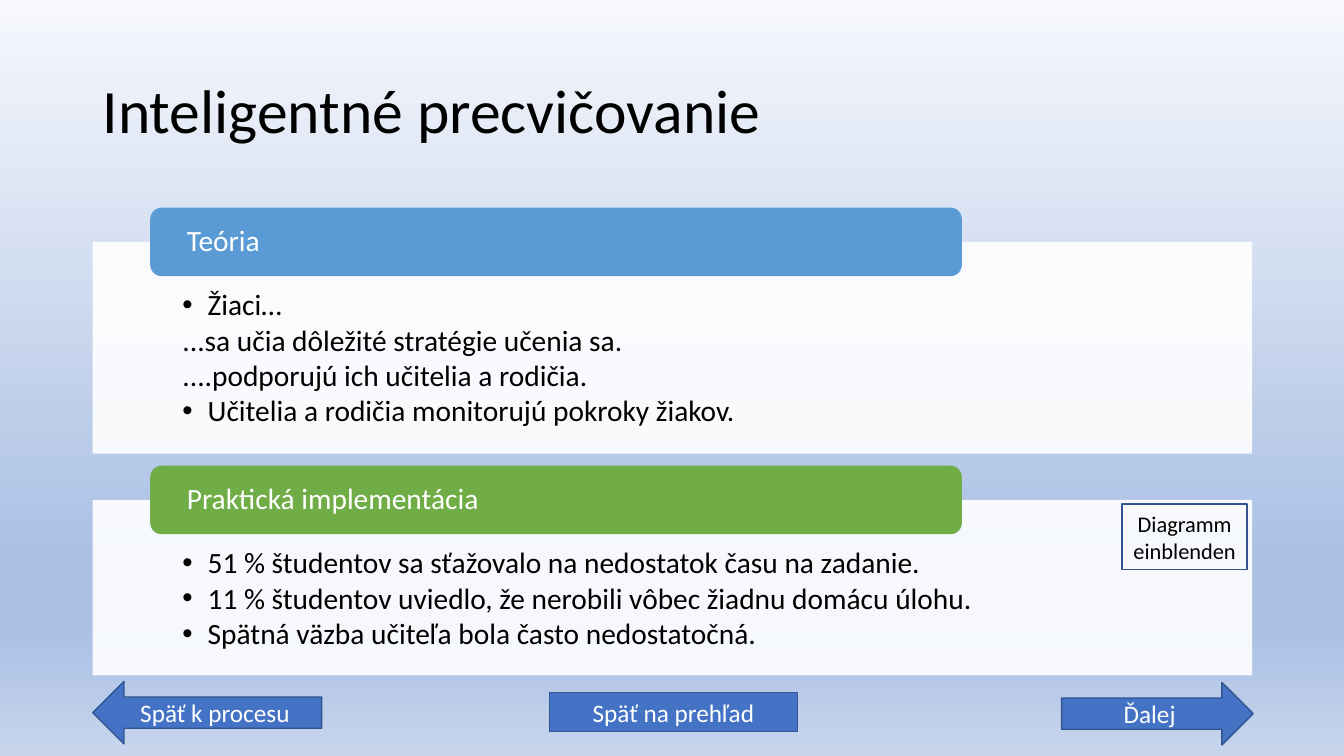
from dataclasses import dataclass

from lxml import etree
from pptx import Presentation
from pptx.dml.color import RGBColor
from pptx.enum.shapes import MSO_SHAPE
from pptx.enum.text import MSO_ANCHOR, PP_ALIGN
from pptx.oxml.ns import qn
from pptx.util import Inches, Pt

RECTANGLE = MSO_SHAPE.RECTANGLE
ROUNDED = MSO_SHAPE.ROUNDED_RECTANGLE
LEFT_ARROW = MSO_SHAPE.LEFT_ARROW
RIGHT_ARROW = MSO_SHAPE.RIGHT_ARROW
LEFT, CENTER = PP_ALIGN.LEFT, PP_ALIGN.CENTER
TOP, MIDDLE = MSO_ANCHOR.TOP, MSO_ANCHOR.MIDDLE


@dataclass(frozen=True)
class Theme:
    font: str = "Calibri"
    black: str = "000000"
    white: str = "FFFFFF"
    theory: str = "5B9BD5"
    practice: str = "70AD47"
    button: str = "4472C4"
    outline: str = "325491"
    backdrop: tuple = ((0, "F6F8FC"), (74, "ABC0E4"), (83, "ABC0E4"), (100, "C7D5ED"))
    title_size: int = 44
    body_size: int = 21
    button_size: int = 18
    note_size: int = 16


theme = Theme()
deck = Presentation()
deck.slide_width, deck.slide_height = Inches(13.33), Inches(7.5)
page = deck.slides.add_slide(deck.slide_layouts[6])


def add_box(kind, left, top, width, height, fill=None, line=None):
    box = page.shapes.add_shape(kind, Inches(left), Inches(top), Inches(width), Inches(height))
    box.shadow.inherit = False
    if fill:
        box.fill.solid()
        box.fill.fore_color.rgb = RGBColor.from_string(fill)
    else:
        box.fill.background()
    if line:
        box.line.color.rgb = RGBColor.from_string(line)
        box.line.width = Pt(1)
    else:
        box.line.fill.background()
    return box


def write(box, lines, size, color, align=LEFT, anchor=MIDDLE, insets=(0.1, 0.05), spacing=0.9):
    """Fill the box with one paragraph per line; insets are horizontal and vertical."""
    frame = box.text_frame
    frame.word_wrap = True
    frame.vertical_anchor = anchor
    frame.margin_left = frame.margin_right = Inches(insets[0])
    frame.margin_top = frame.margin_bottom = Inches(insets[1])
    for number, line in enumerate(lines):
        para = frame.paragraphs[0] if number == 0 else frame.add_paragraph()
        para.alignment = align
        para.line_spacing = spacing
        span = para.add_run()
        span.text = line
        span.font.name = theme.font
        span.font.size = Pt(size)
        span.font.color.rgb = RGBColor.from_string(color)
    return frame


# Background gradient, top to bottom
backdrop = page.background.fill
backdrop.gradient()
backdrop.gradient_angle = 270
stops = next(page.element.iter(qn("a:gsLst")))
for stop in list(stops):
    stops.remove(stop)
for position, color in theme.backdrop:
    stop = etree.SubElement(stops, qn("a:gs"), pos=str(position * 1000))
    etree.SubElement(stop, qn("a:srgbClr"), val=color)

# Title
title = page.shapes.add_textbox(Inches(0.92), Inches(0.4), Inches(11.5), Inches(1.45))
write(title, ["Inteligentné precvičovanie"], theme.title_size, theme.black)

# Sections: heading, colour, panel top, panel height, (bulleted, line)
sections = [
    ("Teória", theme.theory, 2.4, 2.1, [
        (True, "Žiaci…"),
        (False, "...sa učia dôležité stratégie učenia sa."),
        (False, "....podporujú ich učitelia a rodičia."),
        (True, "Učitelia a rodičia monitorujú pokroky žiakov."),
    ]),
    ("Praktická implementácia", theme.practice, 4.96, 1.74, [
        (True, "51 % študentov sa sťažovalo na nedostatok času na zadanie."),
        (True, "11 % študentov uviedlo, že nerobili vôbec žiadnu domácu úlohu."),
        (True, "Spätná väzba učiteľa bola často nedostatočná."),
    ]),
]
for heading, color, top, height, points in sections:
    panel = add_box(RECTANGLE, 0.92, top, 11.5, height, theme.white)
    panel_color = next(panel.element.spPr.iter(qn("a:srgbClr")))
    etree.SubElement(panel_color, qn("a:alpha"), val="90000")
    frame = write(panel, [line for _, line in points], theme.body_size, theme.black,
                  anchor=TOP, insets=(0.89, 0.48))
    frame.margin_bottom = Inches(0.16)
    for para, (bulleted, _) in zip(frame.paragraphs, points):
        para.space_after = Pt(2.6)
        properties = para._p.get_or_add_pPr()
        properties.set("marL", str(Inches(0.25)))
        properties.set("indent", str(-Inches(0.25)))
        if bulleted:
            etree.SubElement(properties, qn("a:buFont"), typeface="Arial")
            etree.SubElement(properties, qn("a:buChar"), char="•")
        else:
            etree.SubElement(properties, qn("a:buNone"))
    header = add_box(ROUNDED, 1.49, top - 0.34, 8.05, 0.68, color)
    write(header, [heading], theme.body_size, theme.white, insets=(0.33, 0))

# Diagram button
diagram = add_box(RECTANGLE, 11.13, 5, 1.24, 0.65, line=theme.outline)
write(diagram, ["Diagramm einblenden"], theme.note_size, theme.black, CENTER, spacing=1.0)

# Navigation buttons
buttons = [
    (LEFT_ARROW, 0.92, 6.76, 2.27, 0.62, "Späť k procesu"),
    (RECTANGLE, 5.45, 6.87, 2.46, 0.39, "Späť na prehľad"),
    (RIGHT_ARROW, 10.53, 6.77, 1.9, 0.62, "Ďalej"),
]
for kind, left, top, width, height, label in buttons:
    button = add_box(kind, left, top, width, height, theme.button, theme.outline)
    write(button, [label], theme.button_size, theme.white, CENTER, spacing=1.0)

deck.save("out.pptx")
